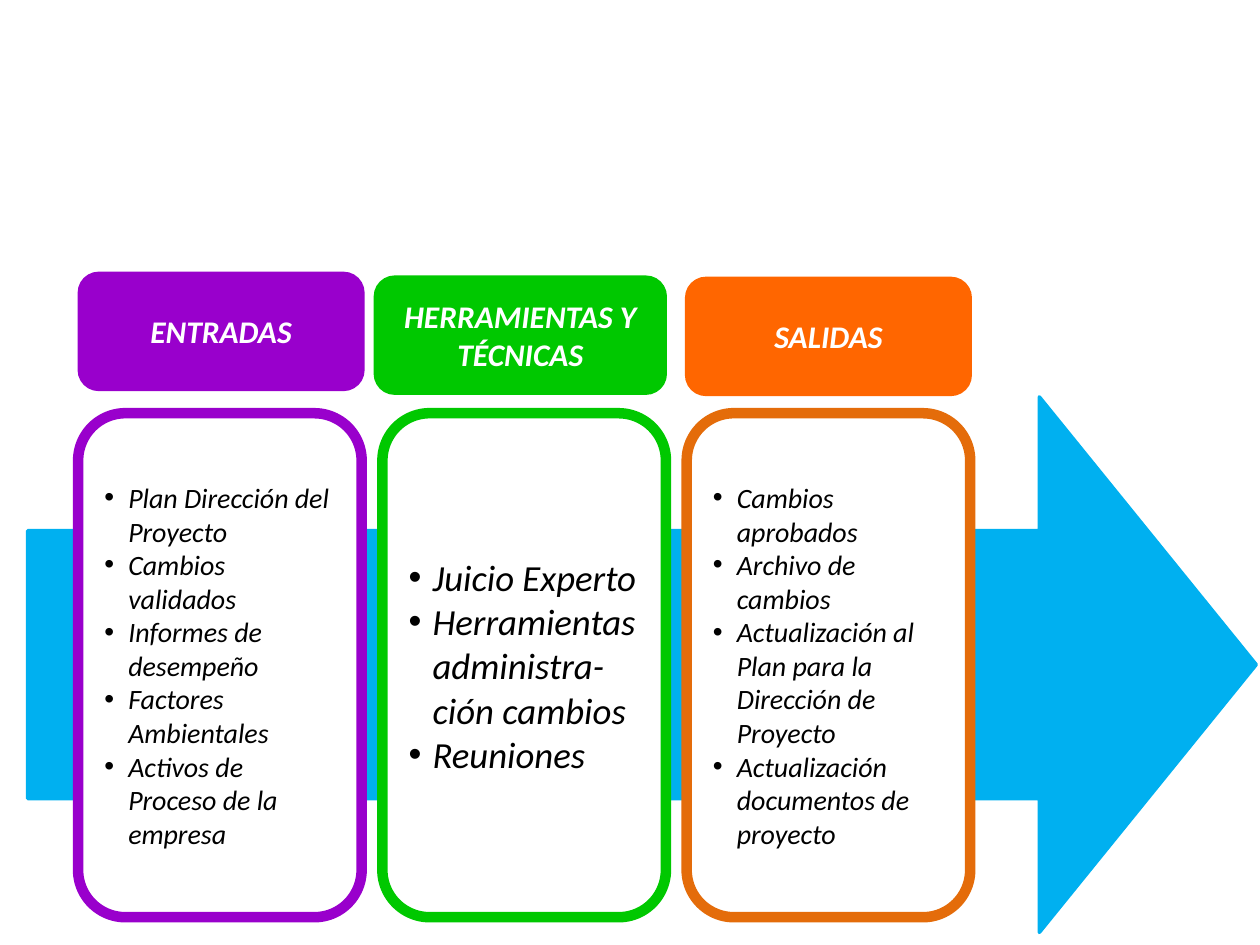
from dataclasses import dataclass

from lxml.etree import SubElement
from pptx import Presentation
from pptx.dml.color import RGBColor as RGB
from pptx.enum.shapes import MSO_SHAPE as Shape
from pptx.enum.text import MSO_ANCHOR as Anchor, PP_ALIGN as Align
from pptx.oxml.ns import qn
from pptx.util import Inches, Pt


@dataclass(frozen=True)
class Theme:
    font: str = "Calibri"
    arrow: str = "00B0F0"
    purple: str = "9900CC"
    green: str = "00C800"
    orange: str = "FF6600"
    dark_orange: str = "E46C0A"
    white: str = "FFFFFF"
    black: str = "000000"
    heading_size: int = 18
    list_size: int = 16
    large_list_size: int = 21
    thin_line: int = 2
    thick_line: int = 6


T = Theme()


@dataclass(frozen=True)
class Column:
    heading: str
    heading_box: tuple[float, float, float]  # left, top, width
    heading_color: str
    border_color: str
    items: tuple[str, ...]
    size: int = T.list_size


COLUMNS = (
    Column("ENTRADAS", (0.63, 2.17, 2.25), T.purple, T.purple,
           ("Plan Dirección del Proyecto", "Cambios validados",
            "Informes de desempeño", "Factores Ambientales",
            "Activos de Proceso de la empresa")),
    Column("HERRAMIENTAS Y TÉCNICAS", (2.98, 2.2, 2.3), T.green, T.green,
           ("Juicio Experto", "Herramientas administra-ción cambios",
            "Reuniones"), T.large_list_size),
    Column("SALIDAS", (5.45, 2.21, 2.25), T.orange, T.dark_orange,
           ("Cambios aprobados", "Archivo de cambios",
            "Actualización al Plan para la Dirección de Proyecto",
            "Actualización documentos de proyecto")),
)
PANEL_LEFT, PANEL_STEP, PANEL_TOP = 0.62, 2.415, 3.28
PANEL_WIDTH, PANEL_HEIGHT = 2.25, 4
HEADING_HEIGHT = 0.92
BULLET_INDENT = Inches(0.19)


def add_block(shapes, kind, box: tuple, fill: str, line: str, width: int):
    sp = shapes.add_shape(kind, *map(Inches, box))
    sp.shadow.inherit = False
    sp.fill.solid()
    sp.fill.fore_color.rgb = RGB.from_string(fill)
    sp.line.color.rgb = RGB.from_string(line)
    sp.line.width = Pt(width)
    return sp


def add_bullet(p) -> None:
    pPr = p._p.get_or_add_pPr()
    pPr.set("marL", str(BULLET_INDENT))
    pPr.set("indent", str(-BULLET_INDENT))
    SubElement(pPr, qn("a:buFont")).set("typeface", "Arial")
    SubElement(pPr, qn("a:buChar")).set("char", "•")


def write(sp, lines: tuple[str, ...], size: int, color: str,
          bold: bool = False, bullets: bool = False) -> None:
    tf = sp.text_frame
    tf.word_wrap = True
    tf.vertical_anchor = Anchor.MIDDLE
    style = {"name": T.font, "size": Pt(size), "bold": bold, "italic": True}
    for i, line in enumerate(lines):
        p = tf.paragraphs[0] if i == 0 else tf.add_paragraph()
        p.alignment = Align.LEFT if bullets else Align.CENTER
        if bullets:
            add_bullet(p)
        r = p.add_run()
        r.text = line
        for name, value in style.items():
            setattr(r.font, name, value)
        r.font.color.rgb = RGB.from_string(color)


def add_panel(shapes, index: int, col: Column) -> None:
    box = (PANEL_LEFT + index * PANEL_STEP, PANEL_TOP, PANEL_WIDTH, PANEL_HEIGHT)
    sp = add_block(shapes, Shape.ROUNDED_RECTANGLE, box, T.white,
                   col.border_color, T.thick_line)
    write(sp, col.items, col.size, T.black, bullets=True)


def add_heading(shapes, col: Column) -> None:
    sp = add_block(shapes, Shape.ROUNDED_RECTANGLE,
                   (*col.heading_box, HEADING_HEIGHT),
                   col.heading_color, col.heading_color, T.thin_line)
    write(sp, (col.heading,), T.heading_size, T.white, bold=True)


def add_flow_arrow(shapes) -> None:
    sp = add_block(shapes, Shape.RIGHT_ARROW, (0.22, 3.15, 9.75, 4.25),
                   T.arrow, T.arrow, T.thin_line)
    sp.adjustments[0] = 0.5
    sp.adjustments[1] = 0.405
    SubElement(sp.line._get_or_add_ln(), qn("a:round"))


def main() -> None:
    prs = Presentation()
    prs.slide_width, prs.slide_height = Inches(10), Inches(7.5)
    slide = prs.slides.add_slide(prs.slide_layouts[6])
    shapes = slide.shapes.add_group_shape().shapes
    add_flow_arrow(shapes)
    for i, col in enumerate(COLUMNS):
        add_panel(shapes, i, col)
    for col in COLUMNS:
        add_heading(shapes, col)
    prs.save("out.pptx")


if __name__ == "__main__":
    main()
